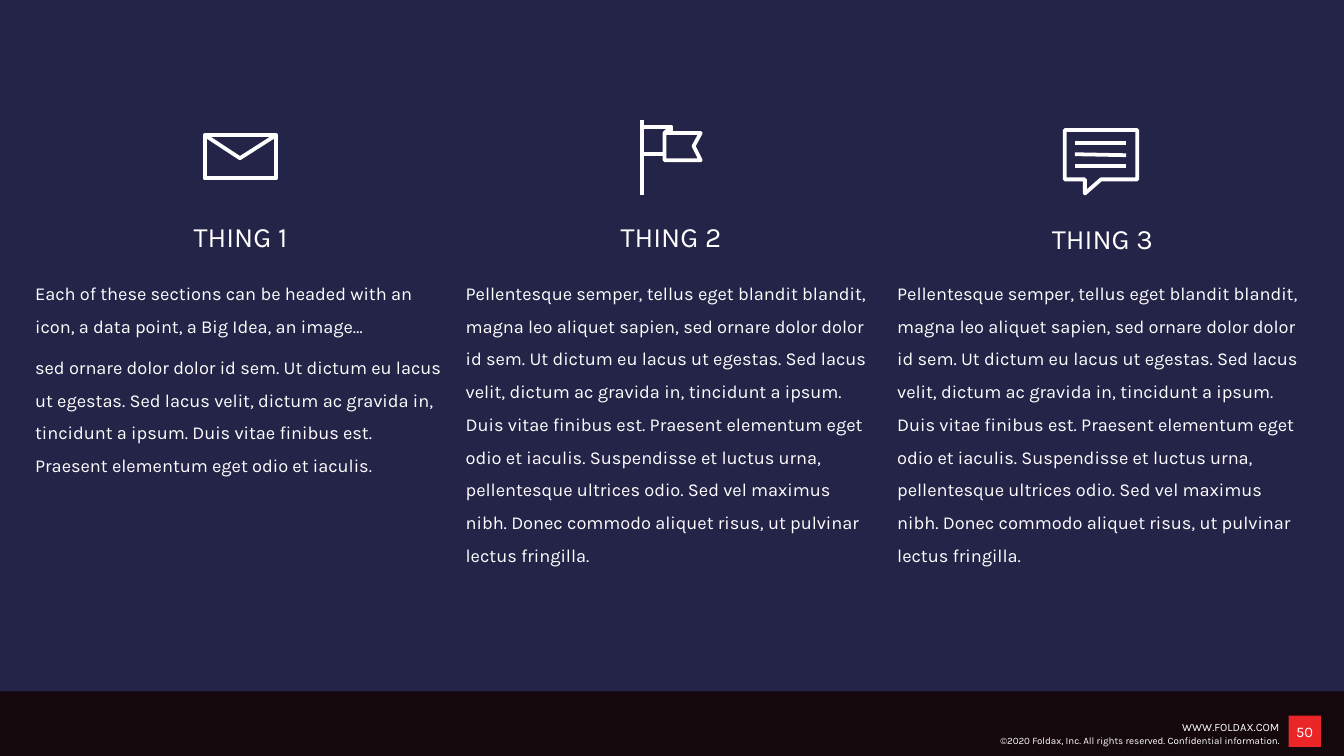
"""Build a dark slide with three icon-headed columns and a footer."""
from lxml import etree
from pptx import Presentation
from pptx import util as u
from pptx.dml import color
from pptx.enum import shapes, text
from pptx.oxml import ns

PX = 9144
WHITE = "FFFFFF"
LOREM = (
    "Pellentesque semper, tellus eget blandit blandit, magna leo aliquet sapien, "
    "sed ornare dolor dolor id sem. Ut dictum eu lacus ut egestas. Sed lacus velit, "
    "dictum ac gravida in, tincidunt a ipsum. Duis vitae finibus est. Praesent "
    "elementum eget odio et iaculis. Suspendisse et luctus urna, pellentesque "
    "ultrices odio. Sed vel maximus nibh. Donec commodo aliquet risus, ut pulvinar "
    "lectus fringilla."
)
INTRO = [
    "Each of these sections can be headed with an icon, a data point, a Big Idea, an image…",
    "sed ornare dolor dolor id sem. Ut dictum eu lacus ut egestas. Sed lacus velit, "
    "dictum ac gravida in, tincidunt a ipsum. Duis vitae finibus est. Praesent "
    "elementum eget odio et iaculis.",
]
COLUMNS = [
    ("THING 1", 216, 213, INTRO),
    ("THING 2", 216, 284, [LOREM]),
    ("THING 3", 218, 284, [LOREM]),
]
ENVELOPE = [
    [(274, 177), (203, 177), (203, 134), (274, 134), (274, 177)],
    [(203, 134), (238, 157), (274, 134)],
]
FLAG = [
    [(637, 119), (637, 193)],
    [(666, 126), (659, 132), (659, 159), (695, 159), (688, 145), (695, 132), (659, 132)],
    [(659, 153), (637, 153), (637, 126), (666, 126), (666, 132)],
]
SPEECH = [
    [(1066, 142), (1117, 142)],
    [(1066, 153), (1117, 154)],
    [(1066, 165), (1117, 165)],
    [(1092, 178), (1128, 178), (1128, 129), (1056, 129), (1056, 178),
     (1076, 178), (1076, 192), (1092, 178)],
]
TITLE = {"alignment": text.PP_ALIGN.CENTER}
BODY = {"line_spacing": 1.5, "space_after": u.Pt(6)}
RIGHT = {"alignment": text.PP_ALIGN.RIGHT}


def paint(target, code):
    """Give a fill a solid colour."""
    target.solid()
    target.fore_color.rgb = color.RGBColor.from_string(code)


def assign(target, values):
    """Set each named attribute on the target."""
    for name, value in values.items():
        setattr(target, name, value)


def write(shape, lines, size, layout, anchor, insets=(10, 5)):
    """Put white Karla paragraphs into a shape."""
    side, end = (inset * PX for inset in insets)
    frame = shape.text_frame
    assign(frame, {"word_wrap": True, "vertical_anchor": anchor,
                   "margin_left": side, "margin_right": side,
                   "margin_top": end, "margin_bottom": end})
    for index, line in enumerate(lines):
        para = frame.add_paragraph() if index else frame.paragraphs[0]
        assign(para, layout)
        span = para.add_run()
        span.text = line
        assign(span.font, {"name": "Karla", "size": u.Pt(size)})
        paint(span.font.fill, WHITE)


def add_text(page, place, *content, **options):
    """Add a text box with the given content."""
    box = page.shapes.add_textbox(*(length * PX for length in place))
    write(box, *content, **options)


def add_block(page, place, code):
    """Add a plain filled rectangle."""
    block = page.shapes.add_shape(
        shapes.MSO_SHAPE.RECTANGLE, *(length * PX for length in place))
    block.shadow.inherit = False
    paint(block.fill, code)
    block.line.fill.background()
    return block


def add_stroke(group, points):
    """Draw a straight connector or an open outline through points."""
    if len(points) == 2:
        ends = (length * PX for point in points for length in point)
        stroke = group.shapes.add_connector(shapes.MSO_CONNECTOR.STRAIGHT, *ends)
        etree.SubElement(stroke.line._get_or_add_ln().getparent(), ns.qn("a:effectLst"))
    else:
        builder = group.shapes.build_freeform(*points[0], scale=PX)
        builder.add_line_segments(points[1:], close=False)
        stroke = builder.convert_to_shape()
        stroke.shadow.inherit = False
        stroke.fill.background()
    paint(stroke.line.fill, WHITE)
    stroke.line.width = u.Pt(2.7)
    etree.SubElement(stroke.line._get_or_add_ln(), ns.qn("a:round"))


def add_icon(page, strokes):
    """Group the strokes of one icon."""
    group = page.shapes.add_group_shape()
    for points in strokes:
        add_stroke(group, points)


def add_footer(page):
    """Add the footer band, its two lines and the page number."""
    add_block(page, (0, 686, 1333, 64), "14080C")
    add_text(page, (1045, 704, 234, 34), ["WWW.FOLDAX.COM"], 8, RIGHT,
             text.MSO_ANCHOR.MIDDLE)
    add_text(page, (829, 705, 450, 40),
             ["©2020 Foldax, Inc. All rights reserved. Confidential information."],
             7, RIGHT, text.MSO_ANCHOR.BOTTOM)
    badge = add_block(page, (1278, 710, 32, 31), "EB2628")
    write(badge, ["50"], 10.5, TITLE, text.MSO_ANCHOR.MIDDLE, insets=(2, 2))


def main():
    """Build and save the slide."""
    deck = Presentation()
    assign(deck, {"slide_width": 1333 * PX, "slide_height": 750 * PX})
    page = deck.slides.add_slide(deck.slide_layouts[6])
    paint(page.background.fill, "242449")
    add_footer(page)
    for strokes in (ENVELOPE, FLAG, SPEECH):
        add_icon(page, strokes)
    for index, (title, top, height, lines) in enumerate(COLUMNS):
        left = 25 + index * 855 // 2
        add_text(page, (left, 259, 425, height), lines, 13, BODY,
                 text.MSO_ANCHOR.TOP, insets=(10, 10))
        add_text(page, (left + 1, top, 425, 37), [title], 20, TITLE,
                 text.MSO_ANCHOR.MIDDLE)
    deck.save("out.pptx")


if __name__ == "__main__":
    main()
